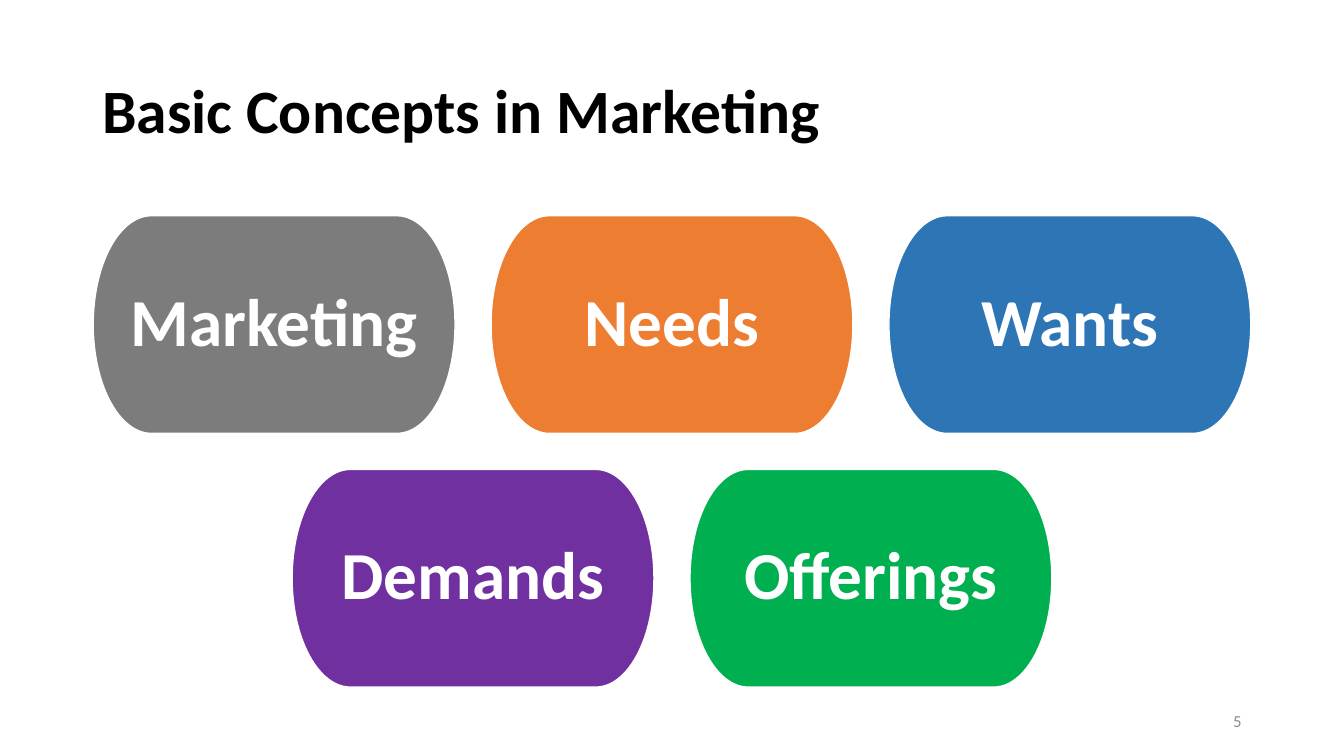
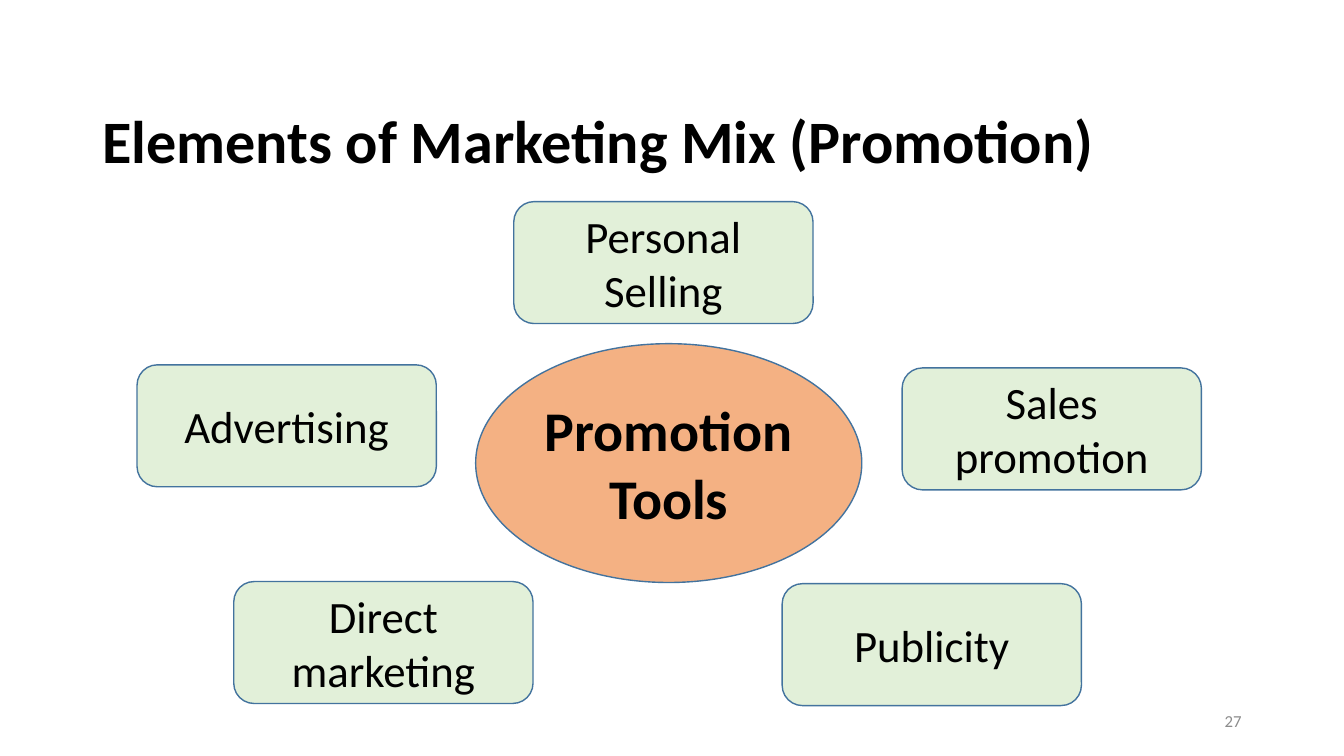
from pptx import Presentation
from pptx.dml.color import RGBColor
from pptx.enum.shapes import MSO_SHAPE
from pptx.enum.text import MSO_ANCHOR, PP_ALIGN
from pptx.util import Pt

TERMINATOR = MSO_SHAPE.FLOWCHART_TERMINATOR
ROUNDED = MSO_SHAPE.ROUNDED_RECTANGLE
OVAL = MSO_SHAPE.OVAL
LEFT, CENTER, RIGHT = PP_ALIGN.LEFT, PP_ALIGN.CENTER, PP_ALIGN.RIGHT
MIDDLE = MSO_ANCHOR.MIDDLE

SLIDE_W, SLIDE_H = 960, 540
COLORS = {
    "black": "000000", "white": "FFFFFF", "number": "8C8C8C",
    "gray": "7C7C7C", "orange": "ED7D31", "blue": "2E75B6",
    "purple": "7030A0", "green": "00B050",
    "mint": "E2F0D9", "peach": "F4B183", "outline": "43739E",
}


def rgb(name):
    return RGBColor.from_string(COLORS[name])


class Deck:
    """Holds the shared style and the current slide."""
    FONT = "Calibri"

    def __init__(self):
        self.prs = Presentation()
        self.prs.slide_width, self.prs.slide_height = Pt(SLIDE_W), Pt(SLIDE_H)
        self.s = None

    def fill_text(self, sp, text, size, color="black", bold=False, align=LEFT, spacing=1.0):
        tf = sp.text_frame
        tf.word_wrap, tf.vertical_anchor = True, MIDDLE
        p = tf.paragraphs[0]
        p.alignment, p.line_spacing = align, spacing
        r = p.add_run()
        r.text = text
        for key, value in {"name": self.FONT, "size": Pt(size), "bold": bold}.items():
            setattr(r.font, key, value)
        r.font.color.rgb = rgb(color)

    def text(self, box, text, size, **style):
        sp = self.s.shapes.add_textbox(*map(Pt, box))
        self.fill_text(sp, text, size, **style)

    def shape(self, kind, box, fill, line, text, size, **style):
        sp = self.s.shapes.add_shape(kind, *map(Pt, box))
        sp.shadow.inherit = False
        sp.fill.solid()
        sp.fill.fore_color.rgb = rgb(fill)
        sp.line.color.rgb = rgb(line)
        sp.line.width = Pt(1)
        self.fill_text(sp, text, size, align=CENTER, **style)

    def slide(self, title, number, top, height, size):
        self.s = self.prs.slides.add_slide(self.prs.slide_layouts[6])
        self.text((66, top, 828, height), title, size, bold=True, spacing=0.9)
        self.text((678, 500.4, 216, 28.8), number, 12, color="number", align=RIGHT)


def concepts(deck):
    deck.slide("Basic Concepts in Marketing", "5", 28.8, 104.4, 44)
    # Centred rows of concept tiles
    width, height, gap, top = 258.5, 155.5, 25.7, 154.1
    rows = [
        [("Marketing", "gray"), ("Needs", "orange"), ("Wants", "blue")],
        [("Demands", "purple"), ("Offerings", "green")],
    ]
    for i, row in enumerate(rows):
        left = (SLIDE_W - len(row) * (width + gap) + gap) / 2
        for j, (label, fill) in enumerate(row):
            box = (left + j * (width + gap), top + i * (height + gap), width, height)
            deck.shape(TERMINATOR, box, fill, "white", label, 48,
                       color="white", bold=True, spacing=0.9)


def promotion(deck):
    deck.slide("Elements of Marketing Mix (Promotion)", "27", 63.4, 79.2, 43)
    # Central topic
    deck.shape(OVAL, (339.8, 245.5, 275.8, 170.6), "peach", "outline",
               "Promotion Tools", 40, bold=True)
    # Tools around it
    tools = [
        ("Advertising", 97.9, 260.6),
        ("Personal Selling", 367, 144),
        ("Sales promotion", 644.4, 262.8),
        ("Publicity", 558.7, 416.9),
        ("Direct marketing", 167, 415.4),
    ]
    for label, left, top in tools:
        deck.shape(ROUNDED, (left, top, 213.8, 87.1), "mint", "outline", label, 32)


def main():
    deck = Deck()
    concepts(deck)
    promotion(deck)
    deck.prs.save("out.pptx")


if __name__ == "__main__":
    main()
